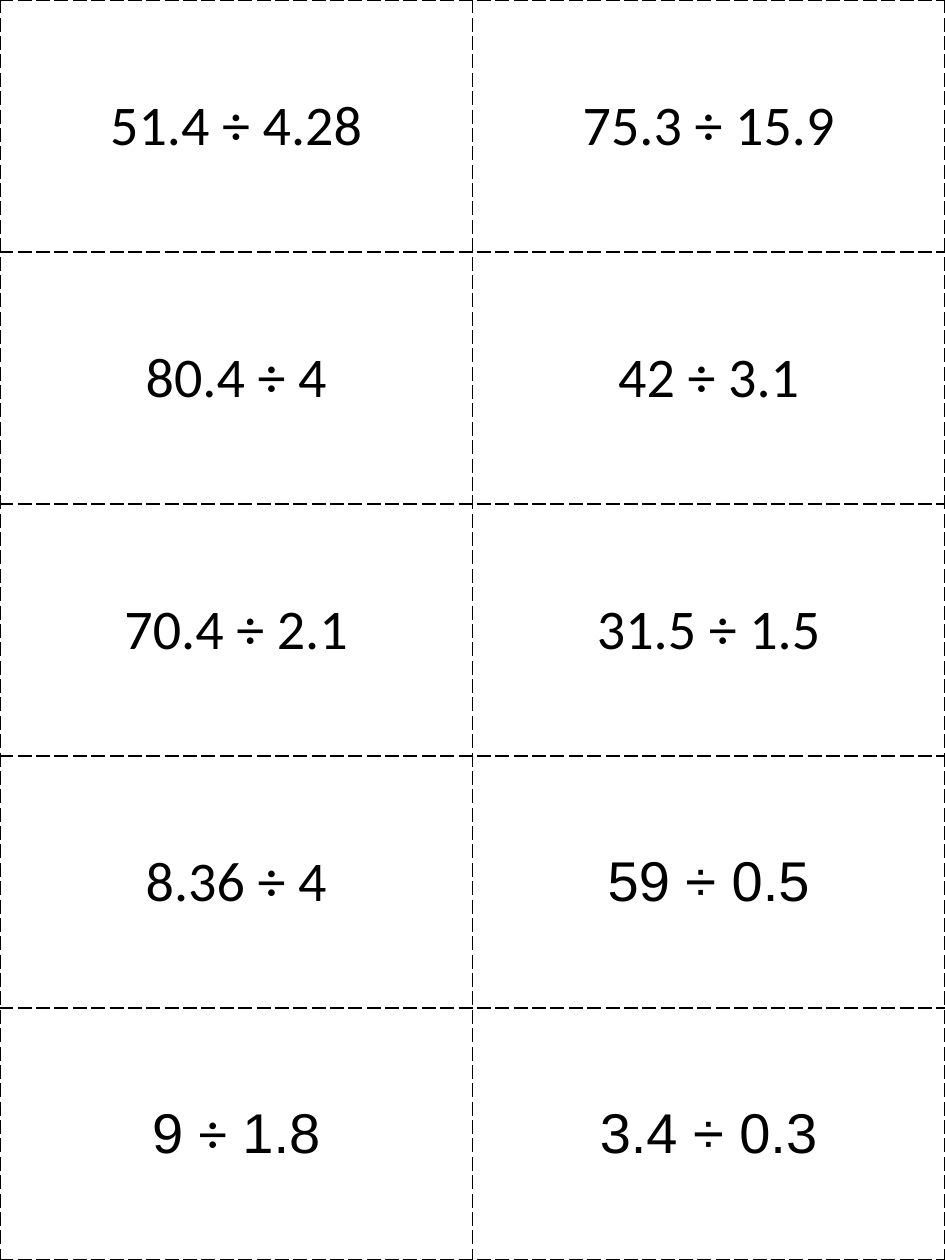
import lxml.etree
import pptx
import pptx.dml.color
import pptx.enum.text
import pptx.oxml.ns
import pptx.util

BLACK = pptx.dml.color.RGBColor(0x00, 0x00, 0x00)
Cm = pptx.util.Cm
qn = pptx.oxml.ns.qn

WIDTH, HEIGHT = 19.05, 25.4
INSET = Cm(0.18)
PROBLEMS = [
    ["51.4 ÷ 4.28", "75.3 ÷ 15.9"],
    ["80.4 ÷ 4", "42 ÷ 3.1"],
    ["70.4 ÷ 2.1", "31.5 ÷ 1.5"],
    ["8.36 ÷ 4", "59 ÷ 0.5"],
    ["9 ÷ 1.8", "3.4 ÷ 0.3"],
]
ARIAL_PROBLEMS = ["59 ÷ 0.5", "3.4 ÷ 0.3"]
MIXED_PROBLEM = "9 ÷ 1.8"


def add_text(p, text, font="Calibri", size=32, color=BLACK):
    r = p.add_run()
    r.text = text
    r.font.name = font
    r.font.size = pptx.util.Pt(size)
    r.font.color.rgb = color


def add_borders(cell, width=1, color=BLACK, dash="lgDash"):
    tc_pr = cell._tc.get_or_add_tcPr()
    for side in ("lnL", "lnR", "lnT", "lnB"):
        ln = lxml.etree.SubElement(tc_pr, qn(f"a:{side}"), w=str(pptx.util.Pt(width)))
        fill = lxml.etree.SubElement(ln, qn("a:solidFill"))
        lxml.etree.SubElement(fill, qn("a:srgbClr"), val=str(color))
        lxml.etree.SubElement(ln, qn("a:prstDash"), val=dash)


prs = pptx.Presentation()
prs.slide_width = Cm(WIDTH)
prs.slide_height = Cm(HEIGHT)
s = prs.slides.add_slide(prs.slide_layouts[6])

rows, cols = len(PROBLEMS), len(PROBLEMS[0])
table = s.shapes.add_table(rows, cols, 0, 0, Cm(WIDTH), Cm(HEIGHT)).table
table.first_row = False
table.horz_banding = False

for i, row in enumerate(PROBLEMS):
    table.rows[i].height = Cm(HEIGHT / rows)
    for j, problem in enumerate(row):
        cell = table.cell(i, j)
        add_borders(cell)
        cell.fill.background()
        cell.vertical_anchor = pptx.enum.text.MSO_ANCHOR.MIDDLE
        p = cell.text_frame.paragraphs[0]
        p.alignment = pptx.enum.text.PP_ALIGN.CENTER
        if problem == MIXED_PROBLEM:
            dividend, sign, divisor = problem.partition("÷")
            add_text(p, dividend, font="Arial")
            add_text(p, sign)
            add_text(p, divisor, font="Arial")
        elif problem in ARIAL_PROBLEMS:
            add_text(p, problem, font="Arial")
        else:
            add_text(p, problem)
            cell.margin_left = cell.margin_right = INSET
            cell.margin_top = cell.margin_bottom = INSET

prs.save("out.pptx")
